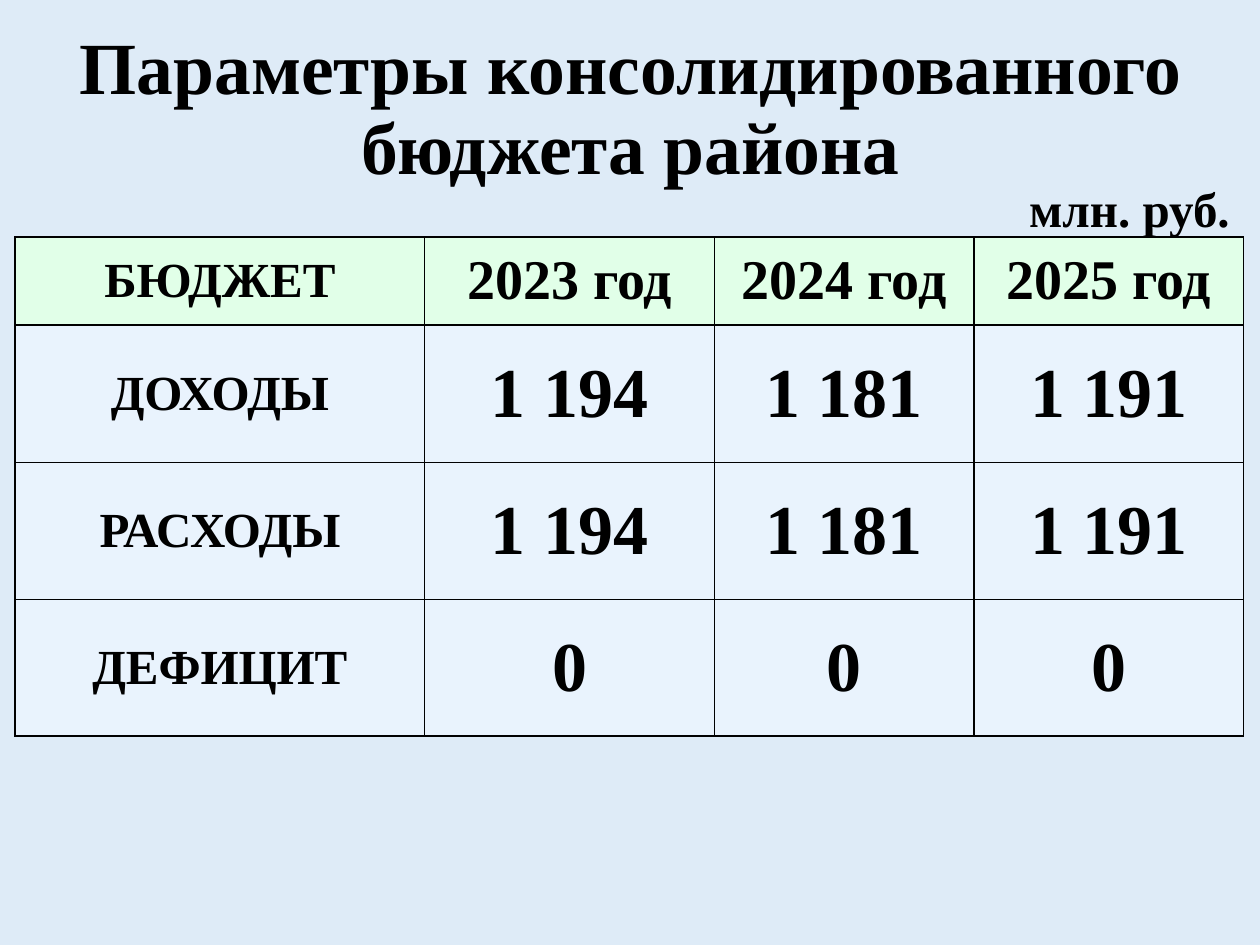
from lxml.etree import SubElement
from pptx import Presentation
from pptx.dml.color import RGBColor
from pptx.enum.text import MSO_ANCHOR, PP_ALIGN
from pptx.oxml.ns import qn
from pptx.util import Inches, Pt

BLACK = RGBColor(0x00, 0x00, 0x00)
BACKGROUND = RGBColor(0xDE, 0xEB, 0xF7)
HEADER_FILL = RGBColor(0xE1, 0xFF, 0xE8)
BODY_FILL = RGBColor(0xE9, 0xF3, 0xFD)

FONT = {"name": "Times New Roman", "bold": True}
COLUMNS = [3.25, 2.3, 2.06, 2.14]
ROWS = [0.7, 1.09, 1.09, 1.08]
BUDGET = [
    ["БЮДЖЕТ", "2023 год", "2024 год", "2025 год"],
    ["ДОХОДЫ", "1 194", "1 181", "1 191"],
    ["РАСХОДЫ", "1 194", "1 181", "1 191"],
    ["ДЕФИЦИТ", "0", "0", "0"],
]


def write(tf, text, size, align):
    """Fill the first paragraph with bold black text; \\v breaks the line."""
    p = tf.paragraphs[0]
    p.text = text
    p.alignment = align
    for r in p.runs:
        for key, value in {**FONT, "size": Pt(size)}.items():
            setattr(r.font, key, value)
        r.font.color.rgb = BLACK
    return p


def add_title(s, box):
    tf = s.shapes.add_textbox(*map(Inches, box)).text_frame
    tf.word_wrap = True
    tf.vertical_anchor = MSO_ANCHOR.MIDDLE
    p = write(tf, "Параметры консолидированного\vбюджета района", 42, PP_ALIGN.CENTER)
    p.line_spacing = 0.9


def add_unit_label(s, box):
    tf = s.shapes.add_textbox(*map(Inches, box)).text_frame
    tf.word_wrap = True
    write(tf, "млн. руб.", 28, PP_ALIGN.LEFT)


def set_borders(cell):
    """Draw a thin black line on each side; borders precede the fill in tcPr."""
    tc_pr = cell._tc.get_or_add_tcPr()
    for i, side in enumerate(("a:lnL", "a:lnR", "a:lnT", "a:lnB")):
        ln = SubElement(tc_pr, qn(side), w=str(Pt(1)))
        fill = SubElement(ln, qn("a:solidFill"))
        SubElement(fill, qn("a:srgbClr"), val=str(BLACK))
        tc_pr.insert(i, ln)


def add_budget_table(s, box):
    frame = s.shapes.add_table(len(ROWS), len(COLUMNS), *map(Inches, box))
    table = frame.table
    for column, width in zip(table.columns, COLUMNS):
        column.width = Inches(width)
    for row, height in zip(table.rows, ROWS):
        row.height = Inches(height)
    for i, texts in enumerate(BUDGET):
        for j, text in enumerate(texts):
            cell = table.cell(i, j)
            size = 28 if j == 0 else 32 if i == 0 else 40
            write(cell.text_frame, text, size, PP_ALIGN.CENTER)
            cell.vertical_anchor = MSO_ANCHOR.MIDDLE
            cell.fill.solid()
            cell.fill.fore_color.rgb = HEADER_FILL if i == 0 else BODY_FILL
            set_borders(cell)


def main():
    prs = Presentation()
    prs.slide_width, prs.slide_height = Inches(10), Inches(7.5)
    s = prs.slides.add_slide(prs.slide_layouts[6])
    s.background.fill.solid()
    s.background.fill.fore_color.rgb = BACKGROUND

    # Heading and unit of measure
    add_title(s, (0.28, 0.13, 9.45, 1.5))
    add_unit_label(s, (8.07, 1.37, 2.4, 0.57))
    # Budget by year
    add_budget_table(s, (0.12, 1.88, sum(COLUMNS), sum(ROWS)))

    prs.save("out.pptx")


if __name__ == "__main__":
    main()
